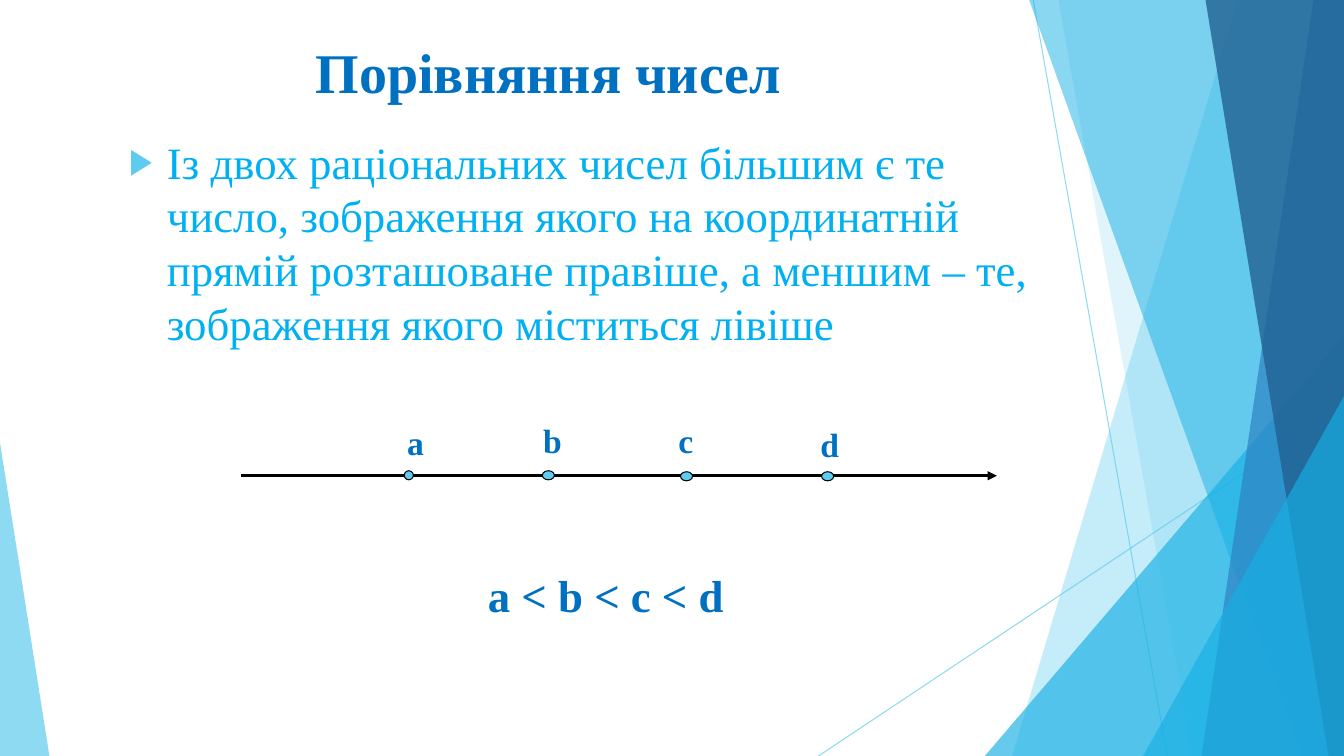
from dataclasses import dataclass

import pptx
import pptx.dml.color
import pptx.enum.shapes
import pptx.enum.text
import pptx.oxml.ns
import pptx.util
from lxml import etree

WIDTH, HEIGHT = pptx.util.Pt(960), pptx.util.Pt(540)
FONT = "Times New Roman"
SKY, CYAN, BLUE, NAVY = "5FCBEF", "17B0E4", "2E83C3", "226292"
HEADING, BODY, BLACK = "0070C0", "00B0F0", "000000"
SHAPE = pptx.enum.shapes.MSO_SHAPE
qn = pptx.oxml.ns.qn


@dataclass
class Band:
    top_x: float
    bottom_x: float
    color: str
    opacity: int


@dataclass
class Wedge:
    left: float
    top: float
    width: float
    apex: float
    color: str
    opacity: int


@dataclass
class Line:
    x1: float
    y1: float
    x2: float
    y2: float
    color: str
    weight: float
    opacity: int = 100
    arrow: bool = False


@dataclass
class Mark:
    name: str
    label_x: float
    label_y: float
    label_width: float
    dot_x: float
    dot_y: float
    dot_width: float = 0.9
    wrap: bool = False


BACKDROP_LINES = [
    Line(76.88, 0, 86.85, 100, SKY, 0.75, 70),
    Line(100, 53.73, 60.9, 100, SKY, 0.75, 70),
]
BACKDROP = [
    Band(92.1, 75.3, SKY, 36),
    Band(78.75, 88.73, SKY, 20),
    Wedge(73.28, 44.4, 26.72, 1, CYAN, 66),
    Band(76.58, 96.83, CYAN, 50),
    Band(97.73, 89.4, BLUE, 70),
    Band(89.7, 98.85, NAVY, 80),
    Wedge(85.05, 52.4, 14.95, 1, CYAN, 66),
    Wedge(0, 58.53, 3.68, 0, SKY, 70),
]
AXIS = Line(17.93, 62.93, 74.18, 62.93, BLACK, 2.25, arrow=True)
MARKS = [
    Mark("а", 29.55, 55.2, 2.78, 30.08, 62.27, dot_width=0.68),
    Mark("b", 39.68, 54.93, 2.93, 40.35, 62.27),
    Mark("с", 49.73, 54.93, 2.63, 50.63, 62.4),
    Mark("d", 60.3, 55.47, 8.18, 61.13, 62.4, wrap=True),
]


def x(share: float) -> int:
    return round(WIDTH * share / 100)


def y(share: float) -> int:
    return round(HEIGHT * share / 100)


def box(left: float, top: float, width: float, height: float) -> tuple[int, int, int, int]:
    return x(left), y(top), x(width), y(height)


def rgb(color: str) -> pptx.dml.color.RGBColor:
    return pptx.dml.color.RGBColor.from_string(color)


def set_opacity(shape, opacity: int) -> None:
    for clr in shape._element.spPr.iter(qn("a:srgbClr")):
        etree.SubElement(clr, qn("a:alpha"), val=str(opacity * 1000))


def paint(shape, color: str) -> None:
    shape.shadow.inherit = False
    shape.fill.solid()
    shape.fill.fore_color.rgb = rgb(color)


def draw_line(s, line: Line) -> None:
    c = s.shapes.add_connector(
        pptx.enum.shapes.MSO_CONNECTOR.STRAIGHT,
        x(line.x1), y(line.y1), x(line.x2), y(line.y2),
    )
    c.line.width = pptx.util.Pt(line.weight)
    c.line.color.rgb = rgb(line.color)
    set_opacity(c, line.opacity)
    if line.arrow:
        etree.SubElement(c.line._get_or_add_ln(), qn("a:tailEnd"), type="triangle")
    etree.SubElement(c._element.spPr, qn("a:effectLst"))


def draw_backdrop(s, part: Band | Wedge) -> None:
    if isinstance(part, Band):
        builder = s.shapes.build_freeform(x(part.top_x), 0)
        builder.add_line_segments(
            [(WIDTH, 0), (WIDTH, HEIGHT), (x(part.bottom_x), HEIGHT)], close=True
        )
        sp = builder.convert_to_shape()
    else:
        sp = s.shapes.add_shape(
            SHAPE.ISOSCELES_TRIANGLE,
            *box(part.left, part.top, part.width, 100 - part.top),
        )
        sp.adjustments[0] = part.apex
    paint(sp, part.color)
    sp.line.fill.background()
    set_opacity(sp, part.opacity)


def format_text(p, size: float, color: str, bold: bool) -> None:
    for r in p.runs:
        r.font.name = FONT
        r.font.size = pptx.util.Pt(size)
        r.font.bold = bold
        r.font.color.rgb = rgb(color)


def draw_mark(s, mark: Mark) -> None:
    dot = s.shapes.add_shape(SHAPE.OVAL, *box(mark.dot_x, mark.dot_y, mark.dot_width, 1.2))
    paint(dot, SKY)
    dot.line.color.rgb = rgb(BLACK)
    dot.line.width = pptx.util.Pt(0.75)
    label = s.shapes.add_textbox(*box(mark.label_x, mark.label_y, mark.label_width, 6.7))
    tf = label.text_frame
    tf.word_wrap = mark.wrap
    tf.text = mark.name
    format_text(tf.paragraphs[0], 24, HEADING, True)


def place(s, shape, left: float, top: float, width: float, height: float) -> None:
    s.shapes._spTree.append(shape._element)
    shape.left, shape.top, shape.width, shape.height = box(left, top, width, height)
    tf = shape.text_frame
    tf.word_wrap = True
    tf.auto_size = pptx.enum.text.MSO_AUTO_SIZE.NONE
    tf.vertical_anchor = pptx.enum.text.MSO_ANCHOR.TOP


def set_indent(p, margin: float, first: float) -> None:
    pPr = p._p.get_or_add_pPr()
    pPr.set("marL", str(x(margin)))
    pPr.set("indent", str(x(first)))


def set_bullet(p, char: str, color: str, percent: int) -> None:
    pPr = p._p.get_or_add_pPr()
    etree.SubElement(etree.SubElement(pPr, qn("a:buClr")), qn("a:srgbClr"), val=color)
    etree.SubElement(pPr, qn("a:buSzPct"), val=str(percent * 1000))
    etree.SubElement(pPr, qn("a:buChar"), char=char)


def write_title(s) -> None:
    title = s.shapes.title
    place(s, title, 5.55, 4.27, 70.5, 19.2)
    title.text_frame.text = "Порівняння чисел"
    p = title.text_frame.paragraphs[0]
    p.alignment = pptx.enum.text.PP_ALIGN.CENTER
    format_text(p, 40, HEADING, True)


def write_body(s) -> None:
    body = s.placeholders[1]
    place(s, body, 8.85, 17.07, 70.5, 80)
    tf = body.text_frame
    tf.text = (
        "Із двох раціональних чисел більшим є те число, зображення якого "
        "на координатній прямій розташоване правіше, а меншим – те, "
        "зображення якого міститься лівіше"
    )
    rule, order = tf.paragraphs[0], tf.add_paragraph()
    order.text = "a < b < c < d"
    for p, before in ((rule, 0), (order, 156)):
        p.line_spacing = pptx.util.Pt(38.5)
        p.space_before = pptx.util.Pt(before)
    set_indent(rule, 2.81, -2.81)
    set_bullet(rule, "▶", SKY, 80)
    format_text(rule, 32, BODY, False)
    set_indent(order, 26.7, 0)
    etree.SubElement(order._p.get_or_add_pPr(), qn("a:buNone"))
    format_text(order, 32, HEADING, True)


def main() -> None:
    prs = pptx.Presentation()
    prs.slide_width, prs.slide_height = WIDTH, HEIGHT
    s = prs.slides.add_slide(prs.slide_layouts[1])
    for line in BACKDROP_LINES:
        draw_line(s, line)
    for part in BACKDROP:
        draw_backdrop(s, part)
    write_title(s)
    write_body(s)
    draw_line(s, AXIS)
    for mark in MARKS:
        draw_mark(s, mark)
    prs.save("out.pptx")


if __name__ == "__main__":
    main()
